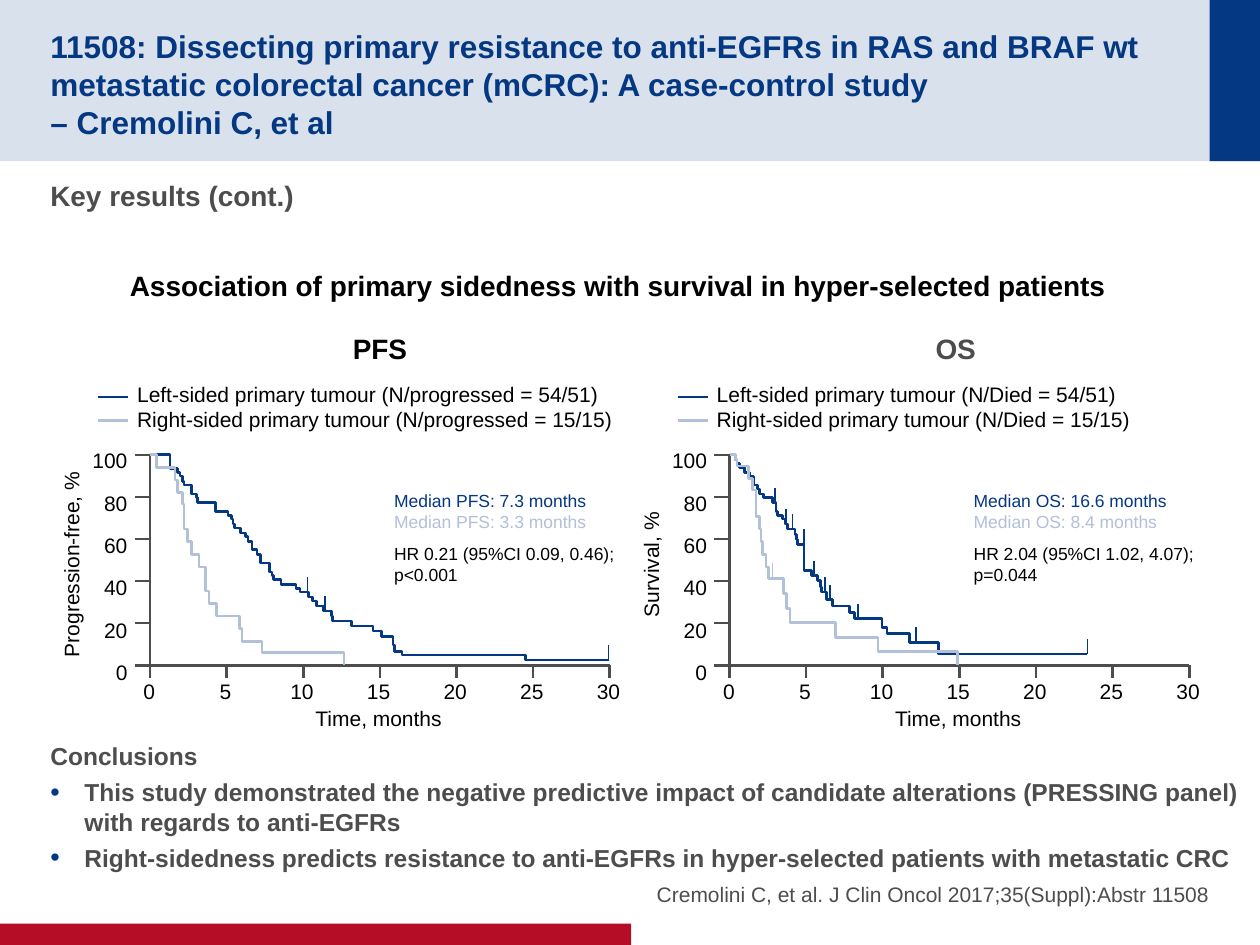
from lxml.etree import SubElement
from pptx import Presentation
from pptx.dml.color import RGBColor
from pptx.enum.shapes import MSO_CONNECTOR as CONN, MSO_SHAPE as SHAPE
from pptx.enum.text import MSO_ANCHOR as ANCHOR, MSO_AUTO_SIZE as AUTO, PP_ALIGN as ALIGN
from pptx.oxml.ns import qn
from pptx.util import Inches, Pt

CELL = Inches(0.1)  # the slide is a grid of 100 columns by 75 rows
COLS, ROWS = 100, 75
NAVY, PALE, GREY, RED, BLACK = "043882", "B2C0D8", "4D4D4D", "B60D27", "000000"
PLOT_TOP, PLOT_W, PLOT_H = 36.1, 36.5, 16.7
LEFT, CENTER, RIGHT = ALIGN.LEFT, ALIGN.CENTER, ALIGN.RIGHT


def rgb(code):
    return RGBColor.from_string(code)


def cells(*values):
    return [round(v * CELL) for v in values]


def add_xml(parent, tag, **attrs):
    return SubElement(parent, qn(tag), {k: str(v) for k, v in attrs.items()})


class Deck:
    font = "Arial"

    def __init__(self):
        self.prs = Presentation()
        self.prs.slide_width, self.prs.slide_height = cells(COLS, ROWS)
        self.slide = self.prs.slides.add_slide(self.prs.slide_layouts[5])
        self.shapes = self.slide.shapes

    def band(self, x, y, w, h, color, alpha=None):
        s = self.shapes.add_shape(SHAPE.RECTANGLE, *cells(x, y, w, h))
        s.shadow.inherit = False
        s.fill.solid()
        s.fill.fore_color.rgb = rgb(color)
        s.line.fill.background()
        if alpha:
            clr = s._element.spPr.find(".//" + qn("a:srgbClr"))
            add_xml(clr, "a:alpha", val=alpha * 1000)

    def frame(self, s, insets, anchor=ANCHOR.TOP, wrap=True):
        tf = s.text_frame
        tf.auto_size = AUTO.NONE
        tf.word_wrap, tf.vertical_anchor = wrap, anchor
        tf.margin_left, tf.margin_top, tf.margin_right, tf.margin_bottom = cells(*insets)
        return tf

    def fill_paragraph(self, p, text, size, color=BLACK, bold=False, align=LEFT,
                       after=0, spacing=None):
        """Add the text run by run; each newline becomes a line break."""
        p.alignment, p.space_after = align, Pt(after)
        if spacing:
            p.line_spacing = spacing
        for i, line in enumerate(text.split("\n")):
            if i:
                p.add_line_break()
            r = p.add_run()
            r.text = line
            r.font.name, r.font.size, r.font.bold = self.font, Pt(size), bold
            r.font.color.rgb = rgb(color)

    def title(self, text, x, y, w, h):
        """Format the title placeholder and bring it in front of the bands."""
        s = self.shapes.title
        s.left, s.top, s.width, s.height = cells(x, y, w, h)
        tf = self.frame(s, (0, 0.5, 0, 0), ANCHOR.MIDDLE)
        self.fill_paragraph(tf.paragraphs[0], text, 18, NAVY, True)
        s._element.getparent().append(s._element)

    def text(self, lines, x, y, w, h, size=12, insets=(1, 0.5, 1, 0.5),
             anchor=ANCHOR.TOP, wrap=True, turn=0, **style):
        """Each line is a string, or a string with its own style."""
        s = self.shapes.add_textbox(*cells(x, y, w, h))
        s.rotation = turn
        tf = self.frame(s, insets, anchor, wrap)
        for i, line in enumerate(lines):
            words, own = (line, {}) if isinstance(line, str) else line
            p = tf.add_paragraph() if i else tf.paragraphs[0]
            self.fill_paragraph(p, words, size, **{**style, **own})
        return tf.paragraphs

    def bullet(self, p):
        pPr = p._p.get_or_add_pPr()
        pPr.set("marL", str(Inches(0.27)))
        pPr.set("indent", str(-Inches(0.27)))
        add_xml(add_xml(pPr, "a:buClr"), "a:srgbClr", val=NAVY)
        add_xml(pPr, "a:buSzPct", val=110000)
        add_xml(pPr, "a:buFont", typeface=self.font)
        add_xml(pPr, "a:buChar", char="•")

    def center_tabs(self, p, stops):
        tabs = add_xml(p._p.get_or_add_pPr(), "a:tabLst")
        for stop in stops:
            add_xml(tabs, "a:tab", pos=cells(stop)[0], algn="ctr")

    def line(self, x1, y1, x2, y2, color, width=1.5):
        s = self.shapes.add_connector(CONN.STRAIGHT, *cells(x1, y1, x2, y2))
        s.line.color.rgb, s.line.width = rgb(color), Pt(width)
        add_xml(s._element.spPr, "a:effectLst")

    def polyline(self, points, color):
        start, *rest = [cells(*point) for point in points]
        builder = self.shapes.build_freeform(*start)
        builder.add_line_segments(rest, close=False)
        s = builder.convert_to_shape()
        s.shadow.inherit = False
        s.fill.background()
        s.line.color.rgb, s.line.width = rgb(color), Pt(1.5)

    def axes(self, x0, y_title):
        bottom = PLOT_TOP + PLOT_H
        self.polyline([(x0, PLOT_TOP), (x0, bottom), (x0 + PLOT_W, bottom)], GREY)
        for i in range(6):
            y = PLOT_TOP + i * PLOT_H / 5
            self.line(x0 - 1.2, y, x0, y, GREY)
        for i in range(7):
            x = x0 + i * PLOT_W / 6
            self.line(x, bottom, x, bottom + 1, GREY)
        self.text([str(v) for v in range(100, -1, -20)], x0 - 5.6, 33.7, 4.8, 21.6,
                  wrap=False, align=RIGHT, spacing=1.68)
        months = "\t".join(str(m) for m in range(0, 31, 5))
        p = self.text([months], x0 - 1.5, 53.4, 40.2, 3, wrap=False)[0]
        self.center_tabs(p, [6.5 + 6.08 * i for i in range(6)])
        self.text(["Time, months"], x0 + 12.1, 55.5, 12.1, 3, wrap=False, align=CENTER)
        self.text([y_title], x0 - 14.75, 43.3, 17, 3, wrap=False, turn=270, align=CENTER)

    def survival_curve(self, x0, color, steps, end, censored):
        """Steps are (x, new level), in tenths of a cell from the plot's top left."""
        points, level = [(0, 0)], 0
        for x, drop in steps:
            points += [(x, level), (x, drop)]
            level = drop
        points.append((end, level))
        self.polyline([(x0 + x / 10, PLOT_TOP + y / 10) for x, y in points], color)
        for mark in censored:
            y = PLOT_TOP + max(drop for x, drop in steps if x < mark) / 10
            self.line(x0 + mark / 10, y, x0 + mark / 10, y - 1.2, color, 1)

    def panel(self, x0, name, name_x, name_color, event, y_title, medians, hazard, curves):
        self.text([name], name_x, 25.8, PLOT_W, 3.7, 16, color=name_color, bold=True, align=CENTER)
        self.text([f"Left-sided primary tumour (N/{event} = 54/51)",
                   f"Right-sided primary tumour (N/{event} = 15/15)"],
                  x0 - 2, 29.8, 40, 5, wrap=False)
        for y, color in ((31.5, NAVY), (33.4, PALE)):
            self.line(x0 - 4.1, y, x0 - 1.7, y, color)
        self.axes(x0, y_title)
        for color, curve in zip((NAVY, PALE), curves):
            self.survival_curve(x0, color, *curve)
        left, right = [f"Median {name}: {m} months" for m in medians]
        self.text([(left, {"color": NAVY}), (right, {"color": PALE, "after": 6}), hazard],
                  x0 + 18.4, 38.4, 20, 8.6, 10, wrap=False)


PFS_LEFT = [(16, 11), (22, 14), (24, 17), (26, 21), (27, 24), (33, 31), (37, 34), (38, 38),
            (52, 45), (62, 48), (65, 51), (66, 55), (67, 58), (72, 62), (76, 65), (78, 69),
            (81, 75), (85, 79), (88, 86), (95, 93), (97, 96), (98, 99), (104, 103),
            (116, 106), (119, 109), (126, 113), (129, 116), (132, 120), (138, 124),
            (144, 128), (145, 132), (160, 136), (177, 140), (184, 144), (193, 151),
            (194, 156), (200, 159), (298, 163)]
PFS_RIGHT = [(5, 10), (20, 20), (22, 30), (26, 39), (27, 59), (30, 69), (33, 79), (39, 89),
             (44, 108), (47, 118), (53, 128), (71, 138), (73, 148), (89, 157), (154, 167)]
OS_LEFT = [(5, 4), (6, 7), (8, 10), (12, 14), (16, 17), (19, 24), (22, 27), (24, 31),
           (27, 34), (34, 38), (37, 45), (38, 48), (42, 51), (44, 55), (46, 59), (52, 63),
           (53, 67), (54, 71), (59, 92), (65, 96), (70, 100), (72, 105), (73, 109),
           (77, 115), (82, 120), (95, 125), (99, 130), (121, 137), (125, 142), (143, 149),
           (166, 158)]
OS_RIGHT = [(5, 4), (6, 9), (15, 19), (18, 28), (21, 49), (24, 59), (25, 69), (26, 79),
            (29, 89), (31, 98), (43, 110), (45, 122), (48, 133), (84, 145), (118, 156),
            (181, 167)]
OS_CENSORED = [36, 45, 50, 59, 67, 76, 80, 102, 148, 284]


def main():
    deck = Deck()
    deck.band(0, 0, COLS, 12.8, NAVY, alpha=15)
    deck.band(96, 0, 4, 12.8, NAVY)
    deck.band(0, 73.3, 50.1, 1.7, RED)
    deck.title("11508: Dissecting primary resistance to anti-EGFRs in RAS and BRAF wt "
               "metastatic colorectal cancer (mCRC): A case-control study\n"
               "– Cremolini C, et al", 4, 2, 90.1, 8.8)
    flush = (0, 0.5, 0, 0.5)
    deck.text(["Key results (cont.)"], 4, 13.7, 92, 4, 16, flush, color=GREY, bold=True)
    deck.text(["Association of primary sidedness with survival in hyper-selected patients"],
              4.9, 20.8, 88.3, 3.7, 16, bold=True, align=CENTER)

    deck.panel(11.9, "PFS", 11.9, BLACK, "progressed", "Progression-free, %", (7.3, 3.3),
               "HR 0.21 (95%CI 0.09, 0.46);\np<0.001",
               [(PFS_LEFT, 364, [125, 139, 364]), (PFS_RIGHT, 154, [])])
    deck.panel(57.9, "OS", 57.6, GREY, "Died", "Survival, %", (16.6, 8.4),
               "HR 2.04 (95%CI 1.02, 4.07);\np=0.044",
               [(OS_LEFT, 284, OS_CENSORED), (OS_RIGHT, 181, [34])])

    conclusions = deck.text(
        ["Conclusions",
         "This study demonstrated the negative predictive impact of candidate alterations "
         "(PRESSING panel) with regards to anti-EGFRs",
         "Right-sidedness predicts resistance to anti-EGFRs in hyper-selected patients "
         "with metastatic CRC"],
        4, 58.3, 94.5, 12.6, 14, flush, color=GREY, bold=True, after=4)
    for p in conclusions[1:]:
        deck.bullet(p)
    deck.text(["Cremolini C, et al. J Clin Oncol 2017;35(Suppl):Abstr 11508"],
              50.8, 66.7, 45.2, 5.3, 12, (0, 0, 0, 0), ANCHOR.BOTTOM,
              color=GREY, align=RIGHT, after=4)
    deck.prs.save("out.pptx")


if __name__ == "__main__":
    main()
